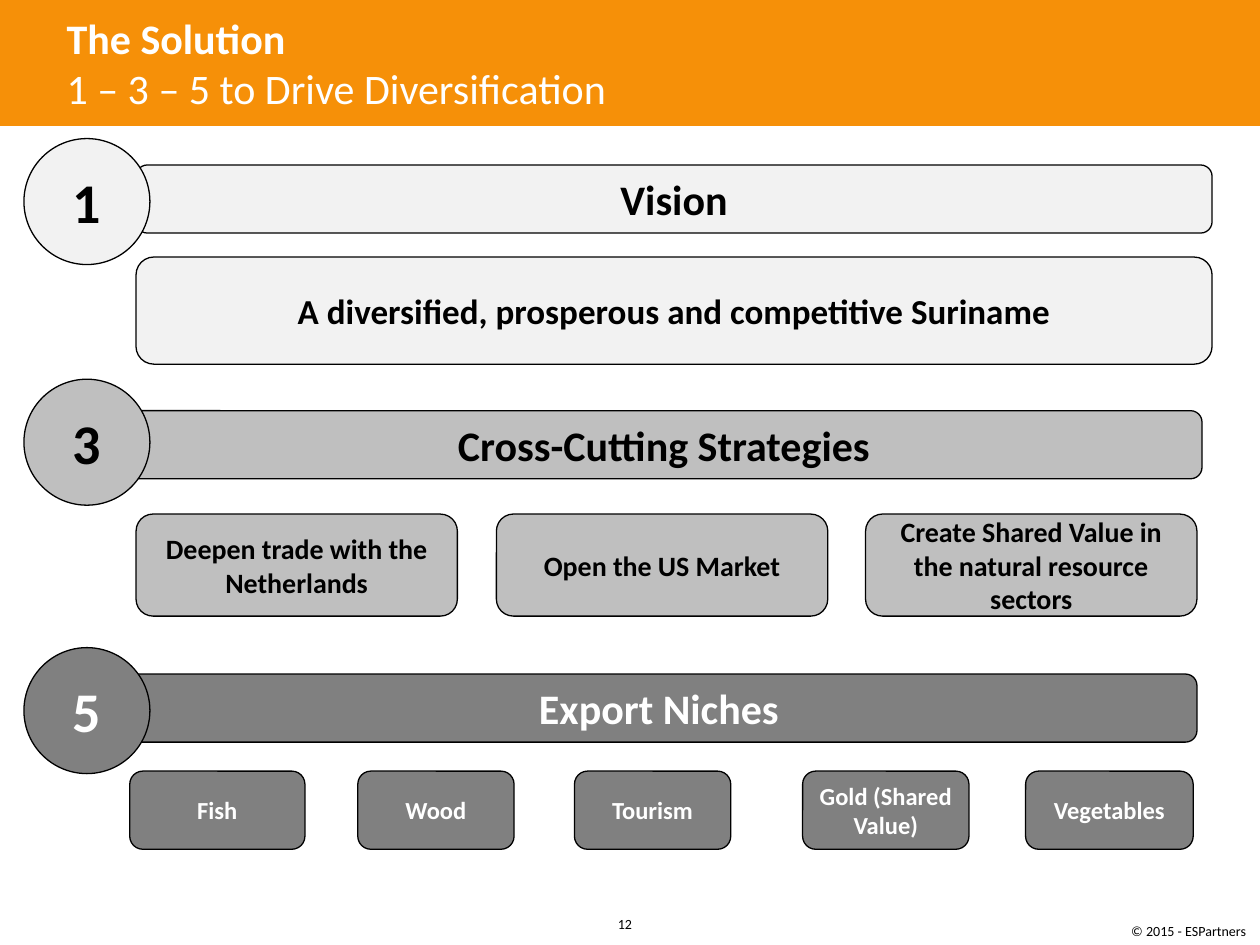
from dataclasses import dataclass

from pptx import Presentation
from pptx.dml.color import RGBColor
from pptx.enum.shapes import MSO_SHAPE as Shape
from pptx.enum.text import MSO_ANCHOR as Anchor, PP_ALIGN as Align
from pptx.util import Inches, Pt

ORANGE = RGBColor(0xF6, 0x90, 0x08)
BLACK = RGBColor(0, 0, 0)
WHITE = RGBColor(0xFF, 0xFF, 0xFF)
PALE = RGBColor(0xF2, 0xF2, 0xF2)
SILVER = RGBColor(0xBF, 0xBF, 0xBF)
GRAY = RGBColor(0x80, 0x80, 0x80)
FONT = "Calibri"
BAR_WIDTH, BAR_HEIGHT = 8.54, 0.54


@dataclass(frozen=True)
class Item:
    text: str
    left: float
    width: float


@dataclass(frozen=True)
class Level:
    """A numbered heading bar with a row of boxes below it."""
    number: str
    heading: str
    fill: RGBColor
    ink: RGBColor
    circle_top: float
    bar_left: float
    bar_top: float
    row_top: float
    row_height: float
    item_size: int
    items: tuple[Item, ...]


LEVELS = (
    Level("1", "Vision", PALE, BLACK, 1.1, 1.08, 1.31, 2.04, 0.85, 20, (
        Item("A diversified, prosperous and competitive Suriname", 1.08, 8.54),
    )),
    Level("3", "Cross-Cutting Strategies", SILVER, BLACK, 3.01, 1, 3.26, 4.08, 0.81, 16, (
        Item("Deepen trade with the Netherlands", 1.08, 2.55),
        Item("Open the US Market", 3.94, 2.63),
        Item("Create Shared Value in the natural resource sectors", 6.87, 2.63),
    )),
    Level("5", "Export Niches", GRAY, WHITE, 5.14, 0.96, 5.35, 6.12, 0.62, 14, (
        Item("Fish", 1.03, 1.39),
        Item("Wood", 2.84, 1.24),
        Item("Tourism", 4.56, 1.24),
        Item("Gold (Shared Value)", 6.37, 1.32),
        Item("Vegetables", 8.14, 1.33),
    )),
)


def style(paragraph, size: int, color: RGBColor, bold: bool = False, align=Align.LEFT) -> None:
    paragraph.alignment = align
    for run in paragraph.runs:
        font = run.font
        font.name, font.size, font.bold = FONT, Pt(size), bold
        font.color.rgb = color


def add_block(slide, kind, left: float, top: float, width: float, height: float,
              text: str, size: int, level: Level) -> None:
    """Add an outlined shape with centred bold text in the level's colours."""
    block = slide.shapes.add_shape(kind, Inches(left), Inches(top), Inches(width), Inches(height))
    block.shadow.inherit = False
    block.fill.solid()
    block.fill.fore_color.rgb = level.fill
    block.line.color.rgb = BLACK
    block.line.width = Pt(0.75)
    frame = block.text_frame
    frame.word_wrap = True
    frame.vertical_anchor = Anchor.MIDDLE
    frame.text = text
    style(frame.paragraphs[0], size, level.ink, True, Align.CENTER)


def add_text(slide, left: float, top: float, width: float, height: float,
             text: str, wrap: bool = True):
    box = slide.shapes.add_textbox(Inches(left), Inches(top), Inches(width), Inches(height))
    frame = box.text_frame
    frame.word_wrap = wrap
    frame.text = text
    return frame


def add_header(slide) -> None:
    band = slide.shapes.add_shape(Shape.RECTANGLE, 0, 0, Inches(10), Inches(1))
    band.shadow.inherit = False
    band.fill.solid()
    band.fill.fore_color.rgb = ORANGE
    band.line.fill.background()
    title = add_text(slide, 0.43, 0, 7.91, 1, "The Solution\n1 – 3 – 5 to Drive Diversification")
    title.vertical_anchor = Anchor.MIDDLE
    for paragraph, bold in zip(title.paragraphs, (True, False)):
        style(paragraph, 24, WHITE, bold)


def add_footer(slide) -> None:
    credit = add_text(slide, 8.88, 7.27, 1.14, 0.24, "© 2015 - ESPartners", wrap=False)
    style(credit.paragraphs[0], 8, BLACK)
    page = add_text(slide, 4.75, 7.22, 0.42, 0.2, "12")
    style(page.paragraphs[0], 8, BLACK, align=Align.CENTER)


def add_level(slide, level: Level) -> None:
    add_block(slide, Shape.ROUNDED_RECTANGLE, level.bar_left, level.bar_top,
              BAR_WIDTH, BAR_HEIGHT, level.heading, 24, level)
    add_block(slide, Shape.OVAL, 0.19, level.circle_top, 1, 1, level.number, 32, level)
    for item in level.items:
        add_block(slide, Shape.ROUNDED_RECTANGLE, item.left, level.row_top,
                  item.width, level.row_height, item.text, level.item_size, level)


def main() -> None:
    deck = Presentation()
    deck.slide_width, deck.slide_height = Inches(10), Inches(7.5)
    slide = deck.slides.add_slide(deck.slide_layouts[6])
    add_footer(slide)
    add_header(slide)
    for level in LEVELS:
        add_level(slide, level)
    deck.save("out.pptx")


if __name__ == "__main__":
    main()
